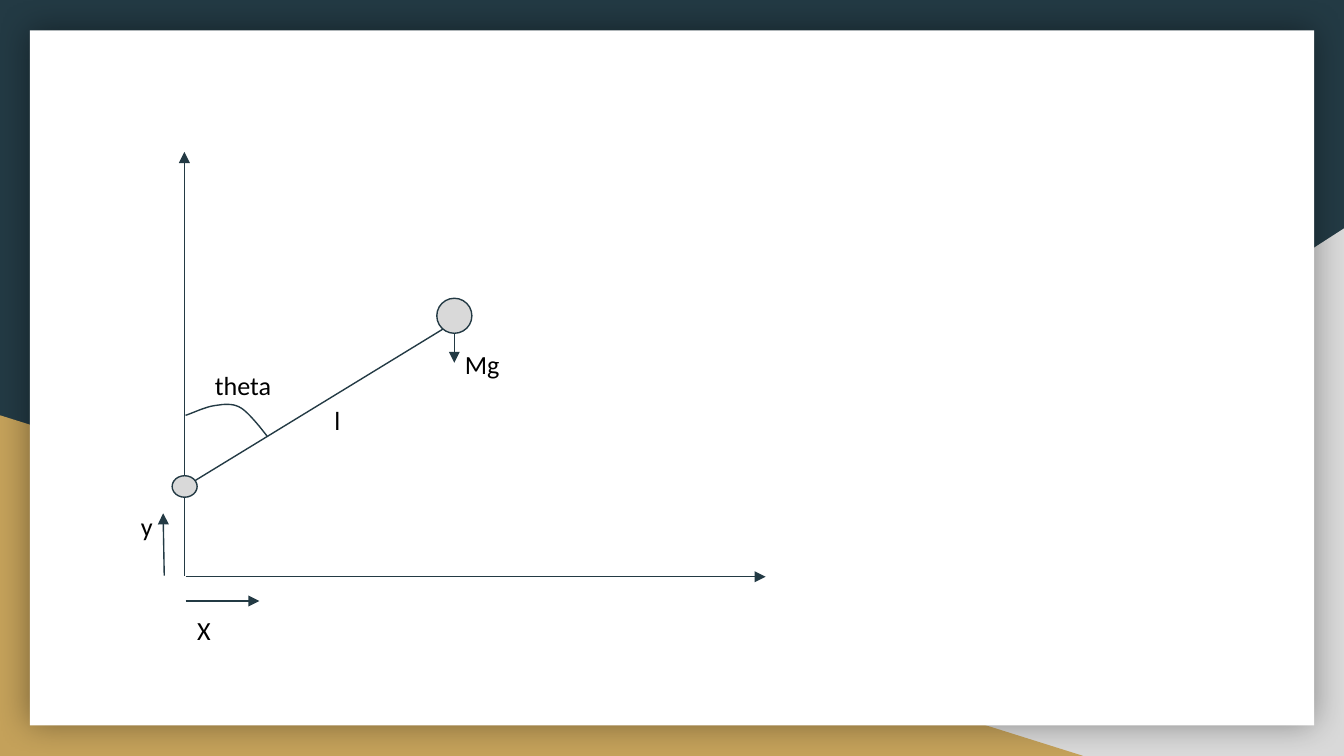
from dataclasses import dataclass

from lxml import etree
from pptx import Presentation
from pptx.dml.color import RGBColor
from pptx.enum.shapes import MSO_CONNECTOR, MSO_SHAPE
from pptx.oxml.ns import qn
from pptx.util import Pt

STRAIGHT = MSO_CONNECTOR.STRAIGHT
OVAL = MSO_SHAPE.OVAL
RECTANGLE = MSO_SHAPE.RECTANGLE
TRIANGLE = MSO_SHAPE.RIGHT_TRIANGLE

Point = tuple[float, float]


@dataclass(frozen=True)
class Theme:
    dark: str = "233A44"
    grey: str = "D9D9D9"
    gold: str = "C4A15A"
    white: str = "FFFFFF"
    black: str = "000000"
    font: str = "Calibri"
    text_size: float = 14
    line_width: float = 0.75
    inset: float = 7.2


@dataclass(frozen=True)
class Block:
    kind: int
    left: float
    top: float
    width: float
    height: float
    fill: str
    outlined: bool = False
    flipped: bool = False


@dataclass(frozen=True)
class Segment:
    start: Point
    end: Point
    arrow: bool = True


@dataclass(frozen=True)
class Label:
    text: str
    left: float
    top: float
    width: float
    height: float


THEME = Theme()

BACKDROP = [
    Block(TRIANGLE, 282.2, 122.4, 437.8, 282.6, THEME.grey, flipped=True),
    Block(TRIANGLE, 0, 222.5, 580.3, 182.5, THEME.gold),
]
PANEL = Block(RECTANGLE, 16, 16.2, 688, 372.4, THEME.white)
BALL = Block(OVAL, 234, 159.8, 18.8, 18.8, THEME.grey, outlined=True)
PIVOT = Block(OVAL, 92.2, 254.9, 13.4, 11.5, THEME.grey, outlined=True)

SEGMENTS = [
    Segment((98.8, 308.4), (98.8, 81.4)),
    Segment((99.4, 309), (410.2, 309)),
    Segment((99.4, 260.6), (243.4, 172.6), arrow=False),
    Segment((243.4, 178.6), (243.4, 194.4)),
    Segment((88, 308.4), (87.4, 275)),
    Segment((99.4, 322), (139, 322)),
]
LABELS = [
    Label("l", 172.1, 209.5, 21.6, 23.8),
    Label("Mg", 241.9, 179.3, 46, 31),
    Label("y", 68.4, 266.4, 18.7, 15.8),
    Label("X", 98.6, 321.8, 21.6, 23.8),
    Label("theta", 108, 190.8, 77, 23.8),
]
ANGLE_ARC = [
    (99.4, 222.5), (102.2, 221.8), (109.4, 218.2), (114.5, 217.4),
    (119.5, 216.7), (124.6, 215.6), (129.6, 218.9),
    (133.9, 221.8), (141.1, 231.1), (143.3, 234),
]


def rgb(color: str) -> RGBColor:
    return RGBColor.from_string(color)


def style_line(line) -> None:
    line.color.rgb = rgb(THEME.dark)
    line.width = Pt(THEME.line_width)


def draw_block(shapes, block: Block):
    s = shapes.add_shape(block.kind, Pt(block.left), Pt(block.top),
                         Pt(block.width), Pt(block.height))
    s.shadow.inherit = False
    s.fill.solid()
    s.fill.fore_color.rgb = rgb(block.fill)
    if block.outlined:
        style_line(s.line)
    else:
        s.line.fill.background()
    if block.flipped:
        s._element.spPr.find(qn("a:xfrm")).set("flipH", "1")
    return s


def add_glow_shadow(s, blur: float, opacity: int) -> None:
    effects = s._element.spPr.find(qn("a:effectLst"))
    shadow = etree.SubElement(effects, qn("a:outerShdw"), blurRad=str(Pt(blur)),
                              dist="0", dir="0", algn="ctr", rotWithShape="0")
    color = etree.SubElement(shadow, qn("a:srgbClr"), val=THEME.black)
    etree.SubElement(color, qn("a:alpha"), val=str(opacity * 1000))


def draw_segment(shapes, segment: Segment) -> None:
    s = shapes.add_connector(STRAIGHT, *map(Pt, segment.start + segment.end))
    style_line(s.line)
    if segment.arrow:
        etree.SubElement(s.line._get_or_add_ln(), qn("a:tailEnd"), type="triangle")
    etree.SubElement(s._element.spPr, qn("a:effectLst"))


def draw_label(shapes, label: Label) -> None:
    s = shapes.add_textbox(Pt(label.left), Pt(label.top), Pt(label.width), Pt(label.height))
    tf = s.text_frame
    tf.word_wrap = True
    tf.margin_left = tf.margin_right = tf.margin_top = tf.margin_bottom = Pt(THEME.inset)
    tf.text = label.text
    r = tf.paragraphs[0].runs[0]
    r.font.name = THEME.font
    r.font.size = Pt(THEME.text_size)
    r.font.color.rgb = rgb(THEME.black)


def bezier_point(controls: list[Point], t: float) -> Point:
    weights = ((1 - t) ** 3, 3 * t * (1 - t) ** 2, 3 * t ** 2 * (1 - t), t ** 3)
    x, y = (sum(w * c for w, c in zip(weights, axis)) for axis in zip(*controls))
    return Pt(x), Pt(y)


def draw_curve(shapes, controls: list[Point], steps: int = 10) -> None:
    points = [bezier_point(controls[i:i + 4], n / steps)
              for i in range(0, len(controls) - 1, 3) for n in range(1, steps + 1)]
    builder = shapes.build_freeform(*map(Pt, controls[0]))
    builder.add_line_segments(points, close=False)
    s = builder.convert_to_shape()
    s.shadow.inherit = False
    s.fill.background()
    style_line(s.line)


def main() -> None:
    prs = Presentation()
    prs.slide_width, prs.slide_height = Pt(720), Pt(405)
    slide = prs.slides.add_slide(prs.slide_layouts[6])
    slide.background.fill.solid()
    slide.background.fill.fore_color.rgb = rgb(THEME.dark)
    shapes = slide.shapes

    for block in BACKDROP:
        draw_block(shapes, block)
    add_glow_shadow(draw_block(shapes, PANEL), blur=18, opacity=40)
    for segment in SEGMENTS:
        draw_segment(shapes, segment)
    draw_curve(shapes, ANGLE_ARC)
    for block in (BALL, PIVOT):
        draw_block(shapes, block)
    for label in LABELS:
        draw_label(shapes, label)

    prs.save("out.pptx")


if __name__ == "__main__":
    main()
